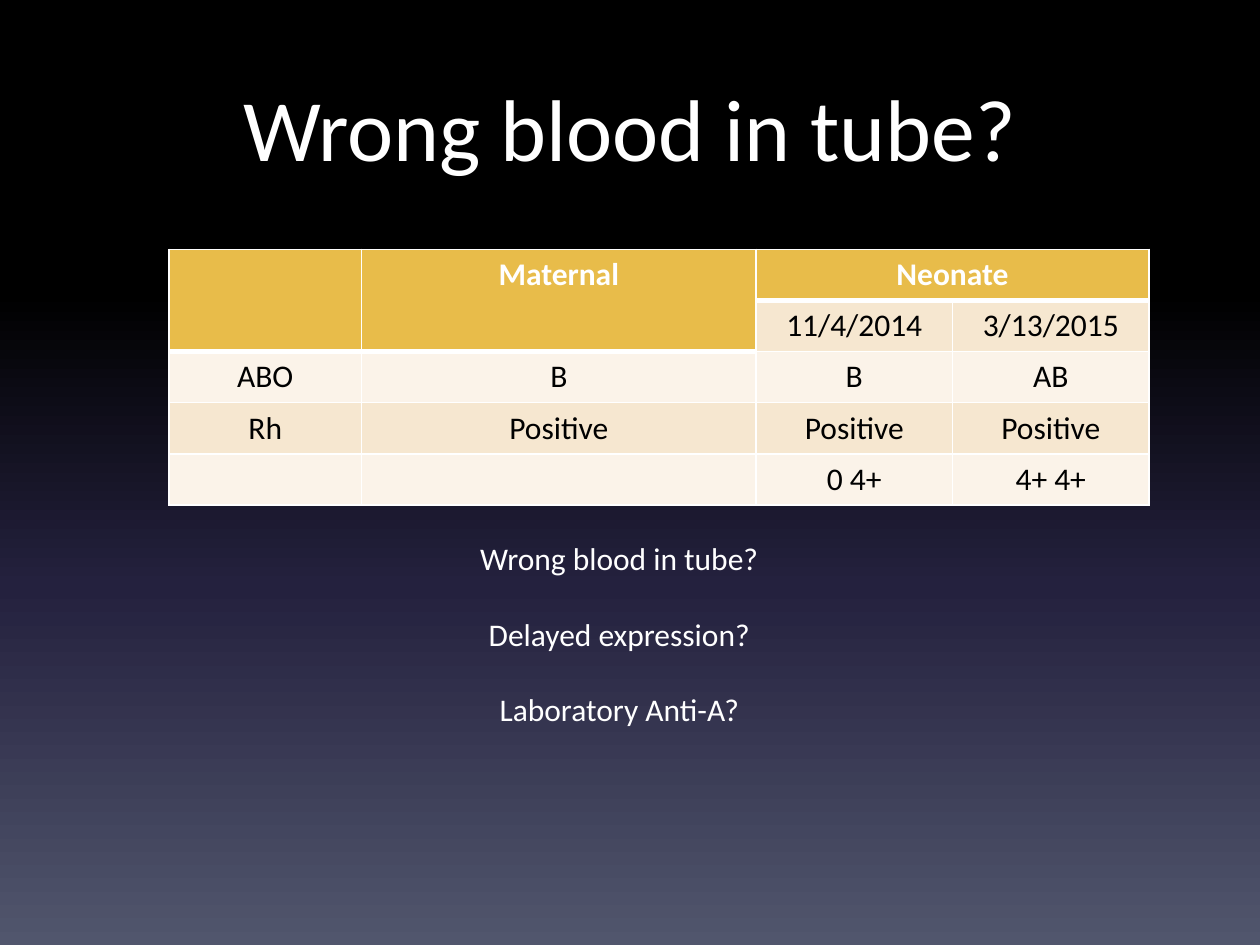
"""Build the blood typing slide with its results table and questions."""
from dataclasses import dataclass

from lxml import etree
from pptx import Presentation, util as u
from pptx.dml import color
from pptx.enum import text
from pptx.oxml import ns

WHITE, BLACK = "FFFFFF", "000000"
GOLD, SAND, CREAM = "E8BC4A", "F6E7D0", "FBF3E9"
STOPS = [(0, BLACK), (31, BLACK), (62, "24213E"), (100, "51566D")]
WIDTHS = [1.53, 3.13, 1.56, 1.56]
HEIGHT = 0.405
MERGES = [((0, 0), (1, 0)), ((0, 1), (1, 1)), ((0, 2), (0, 3))]
ASKS = ["Wrong blood in tube?", "Delayed expression?", "Laboratory Anti-A?"]


@dataclass
class Row:
    words: list[str]
    fill: str
    heads: int = 0


ROWS = [
    Row(["", "Maternal", "Neonate", ""], GOLD, 4),
    Row(["", "", "11/4/2014", "3/13/2015"], SAND, 2),
    Row(["ABO", "B", "B", "AB"], CREAM),
    Row(["Rh", "Positive", "Positive", "Positive"], SAND),
    Row(["", "", "0 4+", "4+ 4+"], CREAM),
]


def rgb(code: str) -> color.RGBColor:
    return color.RGBColor.from_string(code)


def style(par, size: float, code: str, bold: bool = False) -> None:
    par.alignment = text.PP_ALIGN.CENTER
    font = par.font
    font.name, font.size, font.bold = "Calibri", u.Pt(size), bold
    font.color.rgb = rgb(code)


def add_hue(node, code: str) -> None:
    etree.SubElement(node, ns.qn("a:srgbClr"), val=code)


def paint_back(slide) -> None:
    fill = slide.background.fill
    fill.gradient()
    fill.gradient_angle = 270
    stops = next(slide.element.iter(ns.qn("a:gsLst")))
    for old in list(stops):
        stops.remove(old)
    for spot, code in STOPS:
        add_hue(etree.SubElement(stops, ns.qn("a:gs"), pos=str(spot * 1000)), code)


def add_edges(cell, base: float) -> None:
    props = cell._tc.get_or_add_tcPr()
    for spot, (side, width) in enumerate(zip("LRTB", (1, 1, 1, base))):
        line = etree.Element(ns.qn(f"a:ln{side}"), w=str(u.Pt(width)))
        add_hue(etree.SubElement(line, ns.qn("a:solidFill")), WHITE)
        props.insert(spot, line)


def add_title(slide) -> None:
    title = slide.shapes.title
    title.left, title.top = u.Inches(0.5), u.Inches(0.5)
    title.width, title.height = u.Inches(9), u.Inches(1.25)
    frame = title.text_frame
    frame.text = "Wrong blood in tube?"
    frame.auto_size = text.MSO_AUTO_SIZE.NONE
    frame.vertical_anchor = text.MSO_ANCHOR.TOP
    frame.margin_top = u.Inches(0.09)
    style(frame.paragraphs[0], 50, WHITE)


def add_grid(slide) -> None:
    frame = slide.shapes.add_table(
        len(ROWS), len(WIDTHS), u.Inches(1.34), u.Inches(1.98),
        u.Inches(sum(WIDTHS)), u.Inches(HEIGHT * len(ROWS)))
    table = frame.table
    for col, width in zip(table.columns, WIDTHS):
        col.width = u.Inches(width)
    for y, row in enumerate(ROWS):
        table.rows[y].height = u.Inches(HEIGHT)
        for x, word in enumerate(row.words):
            cell, head = table.cell(y, x), x < row.heads
            cell.text = word
            style(cell.text_frame.paragraphs[0], 18, WHITE if head else BLACK, head)
            cell.fill.solid()
            cell.fill.fore_color.rgb = rgb(GOLD if head else row.fill)
            add_edges(cell, 3 if head else 1)
    for start, end in MERGES:
        table.cell(*start).merge(table.cell(*end))


def add_asks(slide) -> None:
    box = slide.shapes.add_textbox(
        u.Inches(1.97), u.Inches(4.23), u.Inches(5.89), u.Inches(1.62))
    frame = box.text_frame
    frame.word_wrap = True
    frame.text = "\n".join(ASKS)
    for spot, par in enumerate(frame.paragraphs):
        style(par, 18, WHITE)
        par.space_before = u.Pt(21.5 if spot else 0)


def main() -> None:
    deck = Presentation()
    deck.slide_width, deck.slide_height = u.Inches(10), u.Inches(7.5)
    slide = deck.slides.add_slide(deck.slide_layouts[5])
    paint_back(slide)
    add_title(slide)
    add_grid(slide)
    add_asks(slide)
    deck.save("out.pptx")


if __name__ == "__main__":
    main()
